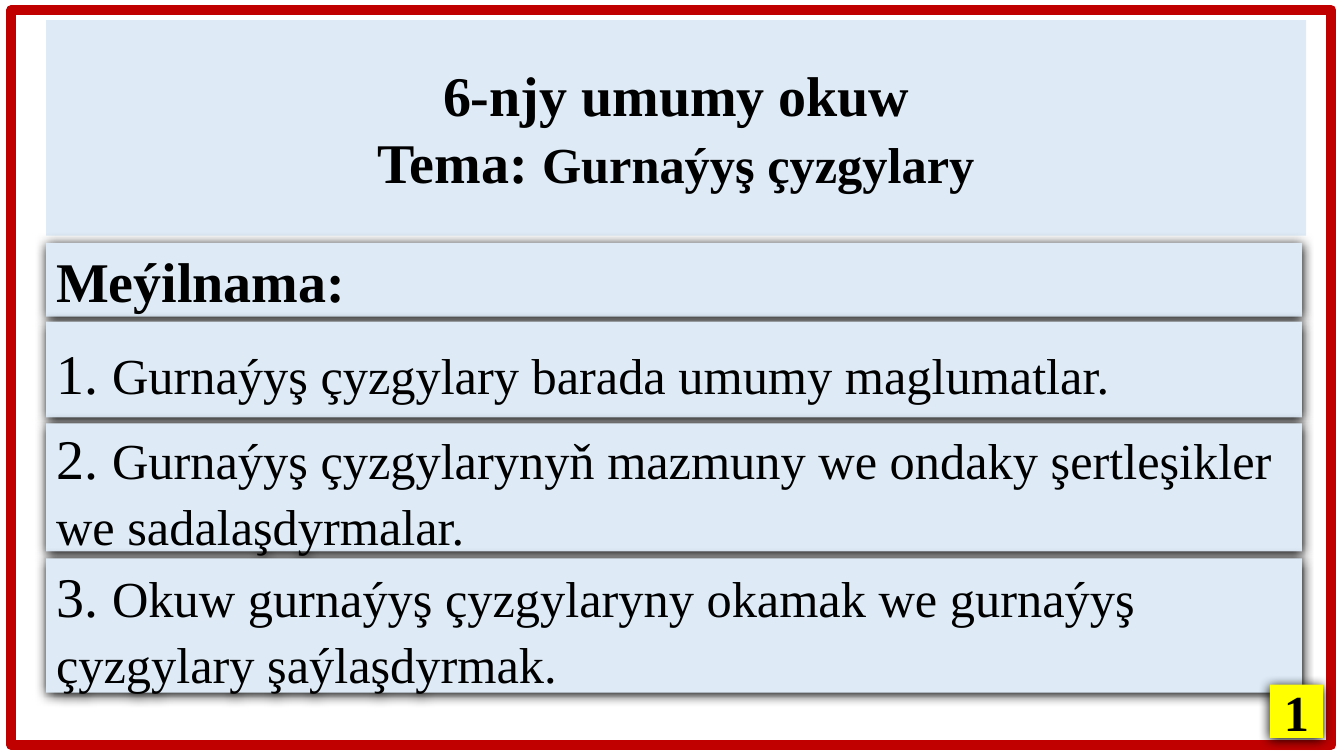
"""Build the opening slide of a lesson: a title panel and a four-bar outline."""
from lxml import etree
from pptx import Presentation
from pptx.dml.color import RGBColor
from pptx.enum.shapes import MSO_SHAPE
from pptx.enum.text import MSO_ANCHOR, MSO_AUTO_SIZE, PP_ALIGN
from pptx.oxml.ns import qn
from pptx.util import Pt

RECT, BAR = MSO_SHAPE.RECTANGLE, MSO_SHAPE.PENTAGON
MIDDLE, NO_FIT = MSO_ANCHOR.MIDDLE, MSO_AUTO_SIZE.NONE
LEFT, CENTER = PP_ALIGN.LEFT, PP_ALIGN.CENTER
FONT = "Times New Roman"
PALE, RED, YELLOW, BLACK = "DEEBF7", "C00000", "FFFF00", "000000"
LARGE, SMALL = 40, 36

TITLE = [
    [("6-njy umumy okuw", LARGE)],
    [("Tema: ", LARGE), ("Gurnaýyş çyzgylary", SMALL)],
]
HEADING = "Meýilnama:"
TOPICS = [
    "Gurnaýyş çyzgylary barada umumy maglumatlar.",
    "Gurnaýyş çyzgylarynyň mazmuny we ondaky şertleşikler we sadalaşdyrmalar.",
    "Okuw gurnaýyş çyzgylaryny okamak we gurnaýyş çyzgylary şaýlaşdyrmak.",
]
BAR_SPANS = [(0, 52.6), (56.2, 68.4), (128.9, 91.4), (225.4, 95.8)]


def color(hex_string):
    """Return the colour for a hex string."""
    return RGBColor.from_string(hex_string)


def fill_shape(sp, hex_string):
    """Give a shape a solid fill and no outline."""
    sp.fill.solid()
    sp.fill.fore_color.rgb = color(hex_string)
    sp.line.fill.background()


def add_shadow(sp):
    """Add a soft black shadow just below a shape."""
    sp.shadow.inherit = False
    effects = sp._element.spPr.find(qn("a:effectLst"))
    shadow = etree.SubElement(
        effects, qn("a:outerShdw"), blurRad=str(Pt(8.5)), dist=str(Pt(1)),
        dir="5400000", algn="t", rotWithShape="0")
    etree.SubElement(shadow, qn("a:srgbClr"), val=BLACK)


def write(sp, paragraphs, align, bold=False, spacing=1.0):
    """Fill a shape with paragraphs given as lists of (text, size) runs."""
    tf = sp.text_frame
    tf.word_wrap = True
    tf.auto_size = NO_FIT
    tf.vertical_anchor = MIDDLE
    for i, runs in enumerate(paragraphs):
        p = tf.add_paragraph() if i else tf.paragraphs[0]
        p.alignment = align
        p.line_spacing = spacing
        for text, size in runs:
            r = p.add_run()
            r.text = text
            r.font.name = FONT
            r.font.size = Pt(size)
            r.font.bold = bold
            r.font.color.rgb = color(BLACK)


def place_title(slide, left, top, width, height):
    """Move the title placeholder into its box and format it."""
    sp = slide.shapes.title
    sp.left, sp.top, sp.width, sp.height = Pt(left), Pt(top), Pt(width), Pt(height)
    fill_shape(sp, PALE)
    write(sp, TITLE, CENTER, bold=True)


def add_outline(slide, left, top, width):
    """Stack the heading bar and the numbered topic bars."""
    rows = [[(HEADING, LARGE)]]
    rows += [[(f"{n}. ", LARGE), (topic, SMALL)] for n, topic in enumerate(TOPICS, 1)]
    for i, (runs, (offset, height)) in enumerate(zip(rows, BAR_SPANS)):
        sp = slide.shapes.add_shape(BAR, Pt(left), Pt(top + offset), Pt(width), Pt(height))
        sp.adjustments[0] = 0
        fill_shape(sp, PALE)
        add_shadow(sp)
        write(sp, [runs], LEFT, bold=i == 0, spacing=1.07 if i else 1.0)


def add_frame(slide, left, top, width, height):
    """Draw the red border around the slide."""
    sp = slide.shapes.add_shape(RECT, Pt(left), Pt(top), Pt(width), Pt(height))
    sp.shadow.inherit = False
    sp.fill.background()
    sp.line.color.rgb = color(RED)
    sp.line.width = Pt(7)


def add_page_number(slide, left, top, side):
    """Add the yellow page number square."""
    sp = slide.shapes.add_shape(RECT, Pt(left), Pt(top), Pt(side), Pt(side))
    fill_shape(sp, YELLOW)
    add_shadow(sp)
    write(sp, [[("1", SMALL)]], CENTER, bold=True)


def main():
    """Build and save the slide."""
    prs = Presentation()
    prs.slide_width, prs.slide_height = Pt(960), Pt(540)
    slide = prs.slides.add_slide(prs.slide_layouts[5])
    place_title(slide, 33, 14.4, 900, 154)
    add_outline(slide, 33, 173.5, 897)
    add_frame(slide, 8, 7.2, 943, 525)
    add_page_number(slide, 907, 489, 38)
    prs.save("out.pptx")


if __name__ == "__main__":
    main()
